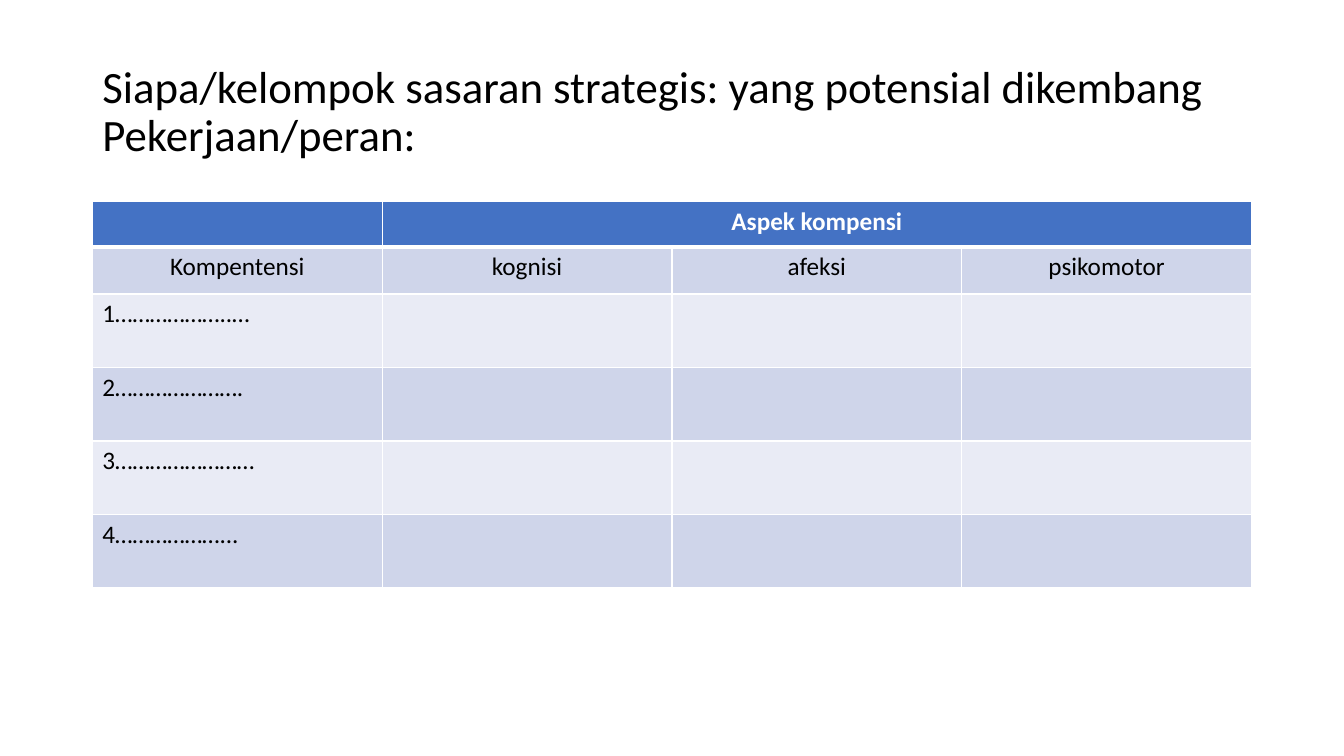
import pptx
import pptx.util
import pptx.dml.color
import pptx.enum.text
import pptx.oxml
import pptx.oxml.ns

PX = 9525  # one px in EMU, 96 to the inch
THEME = {
    "font": "Calibri", "title": 32, "body": 18,
    "ink": "000000", "white": "FFFFFF", "head": "4472C4",
    "bands": ["E9EBF5", "CFD5EA"],
}
ALIGN = pptx.enum.text.PP_ALIGN


def write(par, text, size, color, bold=False):
    par.text = text
    par.font.name = THEME["font"]
    par.font.size = pptx.util.Pt(size)
    par.font.bold = bold
    par.font.color.rgb = pptx.dml.color.RGBColor.from_string(color)


def border(cell, side, width):
    props = cell._tc.get_or_add_tcPr()
    props.append(pptx.oxml.parse_xml(
        f'<a:ln{side} {pptx.oxml.ns.nsdecls("a")} w="{pptx.util.Pt(width)}">'
        f'<a:solidFill><a:srgbClr val="{THEME["white"]}"/></a:solidFill>'
        f'</a:ln{side}>'))


deck = pptx.Presentation()
deck.slide_width, deck.slide_height = 1280 * PX, 720 * PX
slide = deck.slides.add_slide(deck.slide_layouts[6])

# Title
title = slide.shapes.add_textbox(88 * PX, 38 * PX, 1104 * PX, 139 * PX)
frame = title.text_frame
frame.word_wrap = True
frame.vertical_anchor = pptx.enum.text.MSO_ANCHOR.MIDDLE
par = frame.paragraphs[0]
par.line_spacing = 0.9
write(par, "Siapa/kelompok sasaran strategis: yang potensial dikembang\vPekerjaan/peran:",
      THEME["title"], THEME["ink"])

# Table of competences
rows = [
    ["", "Aspek kompensi", "", ""],
    ["Kompentensi", "kognisi", "afeksi", "psikomotor"],
    ["1………………..…", "", "", ""],
    ["2………………….", "", "", ""],
    ["3……………………", "", "", ""],
    ["4………………...", "", "", ""],
]
highs = [43, 45, 70, 70, 70, 70]
table = slide.shapes.add_table(
    len(rows), 4, 88 * PX, 192 * PX, 1104 * PX, sum(highs) * PX).table
for col in table.columns:
    col.width = 276 * PX
for r, texts in enumerate(rows):
    table.rows[r].height = highs[r] * PX
    head = r == 0
    for c, text in enumerate(texts):
        cell = table.cell(r, c)
        for side in "LRTB":
            thick = (head and side == "B") or (r == 1 and side == "T")
            border(cell, side, 3 if thick else 1)
        cell.fill.solid()
        cell.fill.fore_color.rgb = pptx.dml.color.RGBColor.from_string(
            THEME["head"] if head else THEME["bands"][r % 2])
        if text:
            par = cell.text_frame.paragraphs[0]
            par.alignment = ALIGN.CENTER if r < 2 else ALIGN.LEFT
            write(par, text, THEME["body"], THEME["white" if head else "ink"], head)
table.cell(0, 1).merge(table.cell(0, 3))

deck.save("out.pptx")
